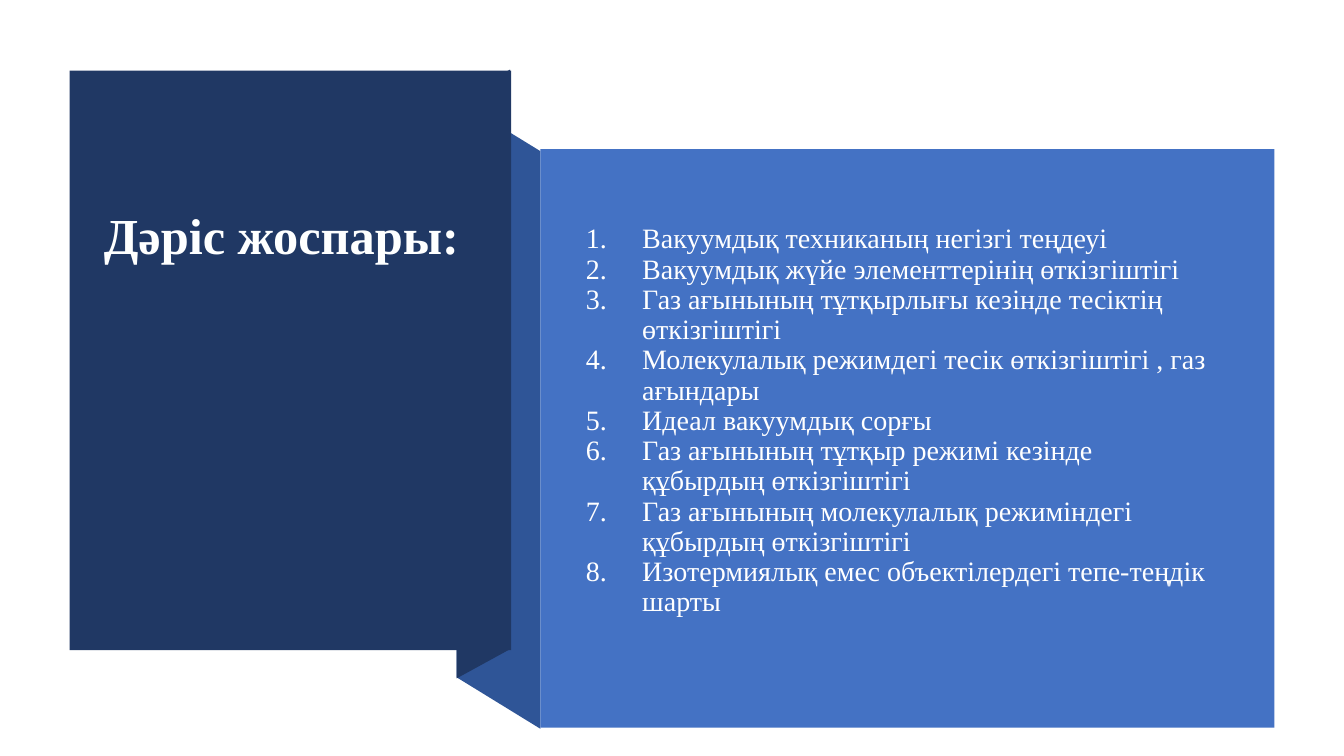
from pptx import Presentation
from pptx.dml.color import RGBColor
from pptx.enum.shapes import MSO_SHAPE as Preset
from pptx.enum.text import MSO_ANCHOR as Anchor, MSO_AUTO_SIZE as AutoSize, PP_ALIGN as Align
from pptx.oxml.ns import qn
from pptx.util import Inches, Pt
from lxml.etree import SubElement

HEADING = "Дәріс жоспары:"
TOPICS = [
    "Вакуумдық техниканың негізгі теңдеуі",
    "Вакуумдық жүйе элементтерінің өткізгіштігі",
    "Газ ағынының тұтқырлығы кезінде тесіктің өткізгіштігі",
    "Молекулалық режимдегі тесік өткізгіштігі , газ ағындары",
    "Идеал вакуумдық сорғы",
    "Газ ағынының тұтқыр режимі кезінде құбырдың өткізгіштігі",
    "Газ ағынының молекулалық режиміндегі құбырдың өткізгіштігі",
    "Изотермиялық емес объектілердегі тепе-теңдік шарты",
]
WIDTH, HEIGHT = 13.33, 7.5
NAVY, FOLD_BLUE, PANEL_BLUE = "203864", "2F5597", "4472C4"
FOLD_LEFT, COVER_RIGHT, PANEL_LEFT = 4.53, 5.06, 5.36
FOLDS = [
    (FOLD_BLUE, [(PANEL_LEFT, 7.23), (FOLD_LEFT, 6.72), (FOLD_LEFT, 0.99), (PANEL_LEFT, 1.5)]),
    (NAVY, [(COVER_RIGHT, 6.44), (FOLD_LEFT, 6.73), (FOLD_LEFT, 0.98), (COVER_RIGHT, 0.69)]),
]
PANELS = [
    (NAVY, (0.69, 0.7, 4.38, 5.75)),
    (PANEL_BLUE, (PANEL_LEFT, 1.48, 7.28, 5.74)),
]
TITLE_BOX = (0.93, 1.97, 6.67, 0.71)
LIST_BOX = (5.71, 1.88, 6.51, 4.74)
LIST_TOP_INSET = 0.35
NUMBER_INDENT = 0.56
TITLE_FONT = {"name": "Times New Roman", "size": Pt(36), "bold": True}
LIST_FONT = {"name": "Times New Roman", "size": Pt(20), "bold": False}
TITLE_FRAME = {"word_wrap": True, "auto_size": AutoSize.NONE, "vertical_anchor": Anchor.TOP}
LIST_FRAME = {**TITLE_FRAME, "margin_top": Inches(LIST_TOP_INSET)}
TITLE_PARAGRAPH = {"alignment": Align.LEFT}
LIST_PARAGRAPH = {**TITLE_PARAGRAPH, "line_spacing": 0.9, "space_before": Pt(0)}


def color(value):
    """Turn a hex string into a colour."""
    return RGBColor.from_string(value)


def apply(target, values):
    """Set each named attribute on the target."""
    for name, value in values.items():
        setattr(target, name, value)


def place(shape, box):
    """Move and size a shape in inches."""
    apply(shape, dict(zip(("left", "top", "width", "height"), map(Inches, box))))


def paint(shape, value):
    """Give a shape a flat fill without outline or shadow."""
    shape.shadow.inherit = False
    shape.fill.solid()
    shape.fill.fore_color.rgb = color(value)
    shape.line.fill.background()


def write(shape, lines, frame_values, paragraph_values, font_values, font_color):
    """Fill a placeholder with formatted paragraphs."""
    frame = shape.text_frame
    frame.text = "\n".join(lines)
    apply(frame, frame_values)
    for paragraph in frame.paragraphs:
        apply(paragraph, paragraph_values)
        for run in paragraph.runs:
            apply(run.font, font_values)
            run.font.color.rgb = color(font_color)


def number(paragraph):
    """Give a paragraph an automatic number and a hanging indent."""
    properties = paragraph._p.get_or_add_pPr()
    properties.set("marL", str(Inches(NUMBER_INDENT)))
    properties.set("indent", str(-Inches(NUMBER_INDENT)))
    SubElement(properties, qn("a:buFont"), typeface="+mj-lt")
    SubElement(properties, qn("a:buAutoNum"), type="arabicPeriod")


def main():
    """Build and save the lecture plan slide."""
    presentation = Presentation()
    apply(presentation, {"slide_width": Inches(WIDTH), "slide_height": Inches(HEIGHT)})
    slide = presentation.slides.add_slide(presentation.slide_layouts[1])
    shapes = slide.shapes
    title, topic_list = shapes.title, slide.placeholders[1]

    for fill, points in FOLDS:
        corners = [(Inches(x), Inches(y)) for x, y in points]
        builder = shapes.build_freeform(*corners[0], scale=1.0)
        builder.add_line_segments(corners[1:], close=True)
        paint(builder.convert_to_shape(), fill)
    for fill, box in PANELS:
        paint(shapes.add_shape(Preset.RECTANGLE, *map(Inches, box)), fill)

    place(topic_list, LIST_BOX)
    write(topic_list, TOPICS, LIST_FRAME, LIST_PARAGRAPH, LIST_FONT, "FFFFFF")
    for paragraph in topic_list.text_frame.paragraphs:
        number(paragraph)
    place(title, TITLE_BOX)
    write(title, [HEADING], TITLE_FRAME, TITLE_PARAGRAPH, TITLE_FONT, "FEFFFF")
    for placeholder in (topic_list, title):
        shapes._spTree.append(placeholder._element)

    presentation.save("out.pptx")


if __name__ == "__main__":
    main()
